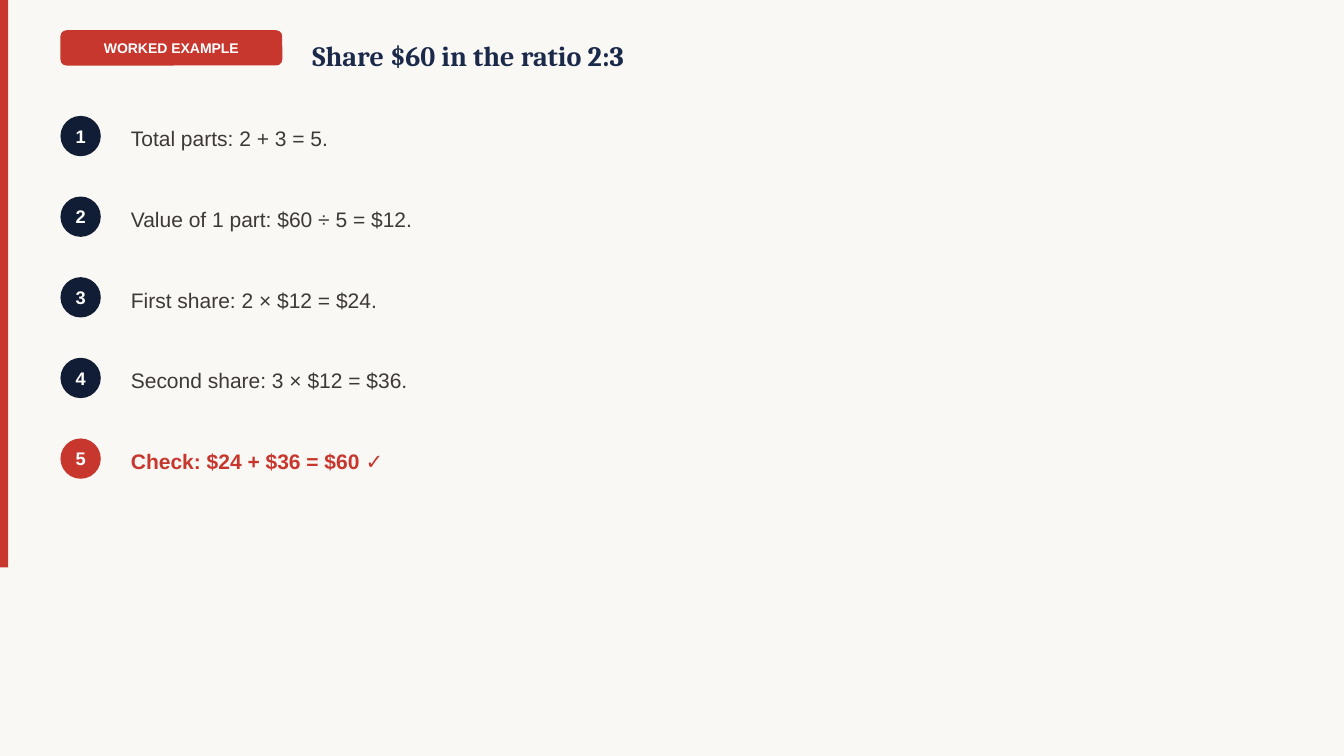
import pptx
import pptx.util
from dataclasses import dataclass
from pptx.dml.color import RGBColor
from pptx.enum.shapes import MSO_SHAPE
from pptx.enum.text import MSO_ANCHOR, PP_ALIGN
from pptx.util import Inches


@dataclass(frozen=True)
class Theme:
    paper: str = "FAF8F5"
    accent: str = "C8372D"
    marker: str = "111D35"
    heading: str = "1B2A4A"
    body: str = "3D3A36"
    white: str = "FFFFFF"
    heading_font: str = "Cambria"
    body_font: str = "Arial"
    title_size: int = 20
    step_size: int = 15
    number_size: int = 13
    badge_size: int = 10


THEME = Theme()
STEPS = [
    "Total parts: 2 + 3 = 5.",
    "Value of 1 part: $60 ÷ 5 = $12.",
    "First share: 2 × $12 = $24.",
    "Second share: 3 × $12 = $36.",
    "Check: $24 + $36 = $60 ✓",
]
FIRST_STEP_TOP = 1.1
STEP_PITCH = 0.8


def write_text(box, text, size, color, bold=True, font=THEME.body_font):
    frame = box.text_frame
    frame.word_wrap = True
    frame.vertical_anchor = MSO_ANCHOR.MIDDLE
    para = frame.paragraphs[0]
    para.text = text
    para.font.name = font
    para.font.size = pptx.util.Pt(size)
    para.font.bold = bold
    para.font.color.rgb = RGBColor.from_string(color)
    return para


def add_block(page, kind, left, top, width, height, color):
    block = page.shapes.add_shape(
        kind, Inches(left), Inches(top), Inches(width), Inches(height))
    block.shadow.inherit = False
    block.fill.solid()
    block.fill.fore_color.rgb = RGBColor.from_string(color)
    block.line.fill.background()
    return block


def add_label(block, text, size):
    """Centre white text in a filled block, without insets."""
    frame = block.text_frame
    frame.margin_left = frame.margin_right = 0
    frame.margin_top = frame.margin_bottom = 0
    write_text(block, text, size, THEME.white).alignment = PP_ALIGN.CENTER


def add_text(page, left, top, width, height, text, size, color, **style):
    box = page.shapes.add_textbox(
        Inches(left), Inches(top), Inches(width), Inches(height))
    write_text(box, text, size, color, **style)


def add_step(page, number, text, is_check):
    top = FIRST_STEP_TOP + (number - 1) * STEP_PITCH
    marker = add_block(page, MSO_SHAPE.OVAL, 0.6, top + 0.05, 0.4, 0.4,
                       THEME.accent if is_check else THEME.marker)
    add_label(marker, str(number), THEME.number_size)
    add_text(page, 1.2, top, 10.5, 0.55, text, THEME.step_size,
             THEME.accent if is_check else THEME.body, bold=is_check)


def main():
    deck = pptx.Presentation()
    deck.slide_width, deck.slide_height = Inches(13.33), Inches(7.5)
    page = deck.slides.add_slide(deck.slide_layouts[6])
    page.background.fill.solid()
    page.background.fill.fore_color.rgb = RGBColor.from_string(THEME.paper)

    # Accent bar on the left edge
    add_block(page, MSO_SHAPE.RECTANGLE, 0, 0, 0.08, 5.63, THEME.accent)

    # Badge and title
    badge = add_block(page, MSO_SHAPE.ROUNDED_RECTANGLE,
                      0.6, 0.3, 2.2, 0.35, THEME.accent)
    badge.adjustments[0] = 0.17
    add_label(badge, "WORKED EXAMPLE", THEME.badge_size)
    add_text(page, 3, 0.3, 8, 0.5, "Share $60 in the ratio 2:3",
             THEME.title_size, THEME.heading, font=THEME.heading_font)

    # Numbered steps, ending with the check
    for number, text in enumerate(STEPS, start=1):
        add_step(page, number, text, is_check=number == len(STEPS))

    deck.save("out.pptx")


if __name__ == "__main__":
    main()
